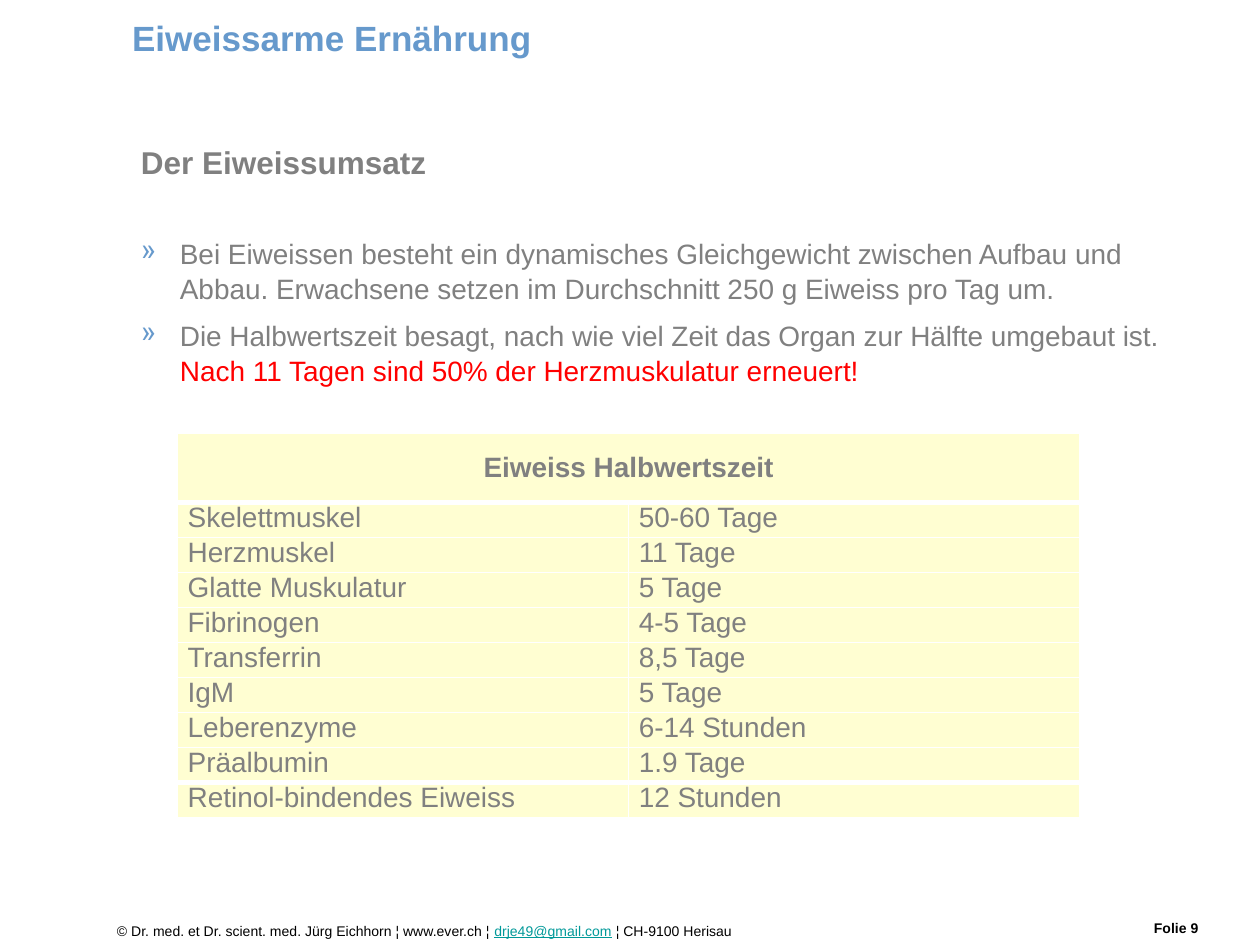
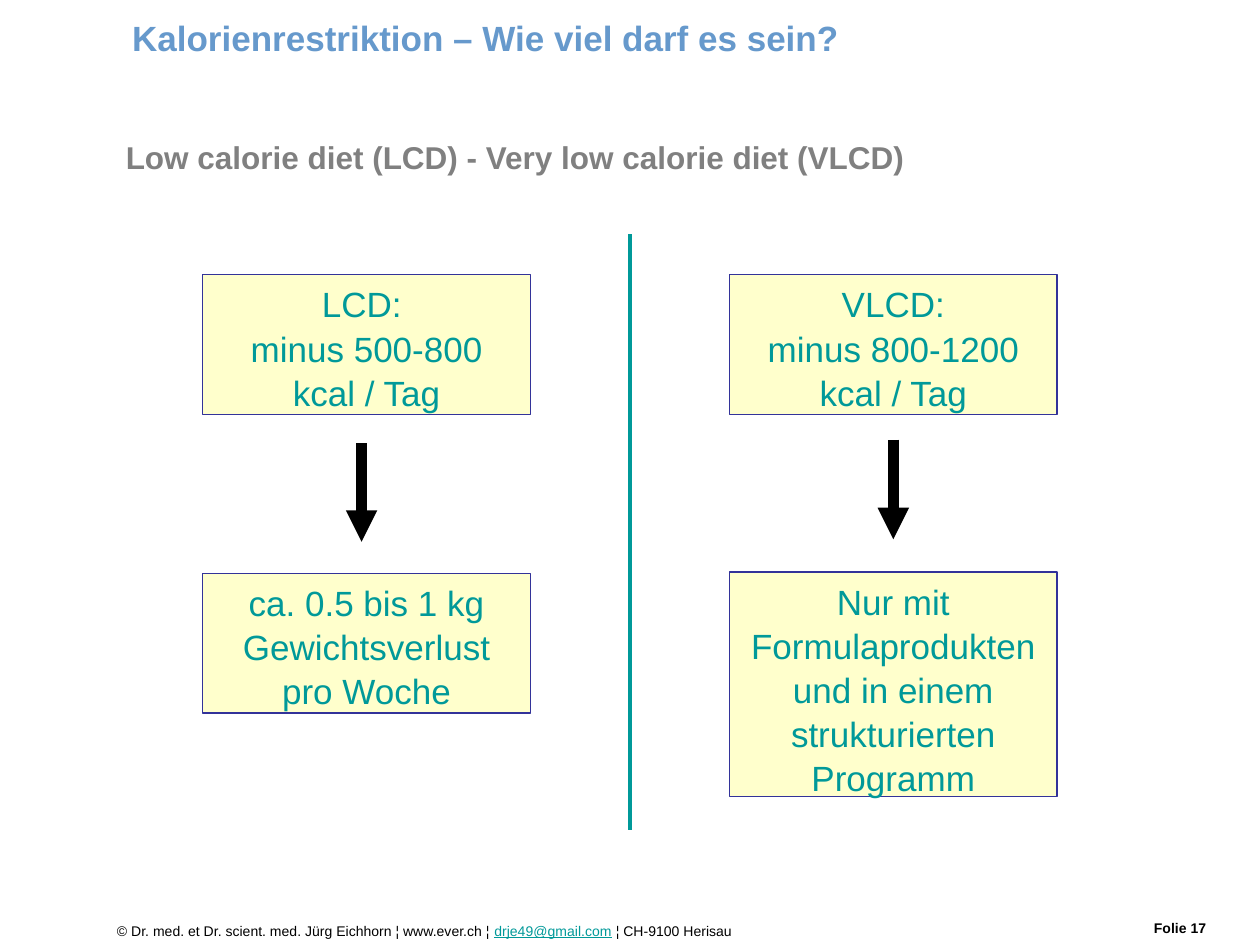
"""Builds two slides on protein turnover and calorie restriction."""
from dataclasses import dataclass, field
from typing import Any

from lxml import etree
from pptx import Presentation
from pptx.dml.color import RGBColor
from pptx.enum.shapes import MSO_CONNECTOR, MSO_SHAPE
from pptx.enum.text import MSO_ANCHOR, PP_ALIGN
from pptx.oxml.ns import qn
from pptx.util import Inches, Pt

STRAIGHT = MSO_CONNECTOR.STRAIGHT
RECTANGLE = MSO_SHAPE.RECTANGLE
TOP, MIDDLE = MSO_ANCHOR.TOP, MSO_ANCHOR.MIDDLE
LEFT, CENTER = PP_ALIGN.LEFT, PP_ALIGN.CENTER

FONT = "Arial"
BLUE, GREY, TEAL, RED = "6699CC", "808080", "009999", "FF0000"
BLACK, WHITE, NAVY = "000000", "FFFFFF", "333399"
CREAM, PALE_YELLOW = "FFFFCC", "FFFED2"
LINE_SPACING = 1.05
BULLET_INDENT = Inches(0.31)

TITLE = {"size": Pt(20), "bold": True}
HEADING = {"size": Pt(18), "bold": True}
BODY = {"size": Pt(16), "bold": False}
BOX = {"size": Pt(20), "bold": False}
FOOTER = {"size": Pt(8), "bold": False}
LINK = FOOTER | {"underline": True}
PAGE_NUMBER = FOOTER | {"bold": True}


@dataclass(frozen=True)
class Span:
    """A stretch of text in one format; a newline is a line break."""
    text: str
    style: dict[str, Any]
    color: str


@dataclass(frozen=True)
class Para:
    """A paragraph made of spans."""
    spans: list[Span]
    layout: dict[str, Any] = field(default_factory=dict)
    bullet: str = ""


@dataclass(frozen=True)
class Area:
    """A position and size in inches."""
    left: float
    top: float
    width: float
    height: float

    def lengths(self) -> list[int]:
        """Return the four measures as lengths."""
        return [Inches(n) for n in (self.left, self.top, self.width, self.height)]


@dataclass(frozen=True)
class Card:
    """A framed box with one or more paragraphs."""
    area: Area
    texts: list[str]


@dataclass(frozen=True)
class Stroke:
    """A vertical line, with or without an arrowhead."""
    x: float
    top: float
    bottom: float
    color: str
    width: float
    arrow: bool = False


FOOTER_SPANS = [
    Span("© Dr. med. et Dr. scient. med. Jürg Eichhorn ¦ www.ever.ch ¦ ", FOOTER, BLACK),
    Span("drje49@gmail.com", LINK, TEAL),
    Span(" ¦ CH-9100 Herisau", FOOTER, BLACK),
]

TURNOVER_PARAS = [
    Para([Span("Der Eiweissumsatz", HEADING, GREY)],
         {"line_spacing": LINE_SPACING, "space_after": Pt(31)}),
    Para([Span("Bei Eiweissen besteht ein dynamisches Gleichgewicht zwischen Aufbau und\n"
               "Abbau. Erwachsene setzen im Durchschnitt 250 g Eiweiss pro Tag um.", BODY, GREY)],
         {"line_spacing": LINE_SPACING, "space_after": Pt(6.4)}, "»"),
    Para([Span("Die Halbwertszeit besagt, nach wie viel Zeit das Organ zur Hälfte umgebaut ist.\n",
               BODY, GREY),
          Span("Nach 11 Tagen sind 50% der Herzmuskulatur erneuert!", BODY, RED)],
         {"line_spacing": LINE_SPACING}, "»"),
]

HALF_LIVES = [
    ("Skelettmuskel", "50-60 Tage"),
    ("Herzmuskel", "11 Tage"),
    ("Glatte Muskulatur", "5 Tage"),
    ("Fibrinogen", "4-5 Tage"),
    ("Transferrin", "8,5 Tage"),
    ("IgM", "5 Tage"),
    ("Leberenzyme", "6-14 Stunden"),
    ("Präalbumin", "1.9 Tage"),
    ("Retinol-bindendes Eiweiss", "12 Stunden"),
]
TABLE_AREA = Area(1.41, 3.44, 7.16, 3.05)
HEADER_HEIGHT = 0.55

LCD_LEFT, VLCD_LEFT, CARD_WIDTH = 1.61, 5.79, 2.6
CARDS = [
    Card(Area(LCD_LEFT, 2.18, CARD_WIDTH, 1.11), ["LCD: \nminus 500-800 kcal / Tag"]),
    Card(Area(VLCD_LEFT, 2.18, CARD_WIDTH, 1.11), ["VLCD:\nminus 800-1200 kcal / Tag"]),
    Card(Area(LCD_LEFT, 4.55, CARD_WIDTH, 1.11), ["ca. 0.5 bis 1 kg Gewichtsverlust pro Woche"]),
    Card(Area(VLCD_LEFT, 4.54, CARD_WIDTH, 1.78),
         ["Nur mit Formulaprodukten", "und in einem strukturierten Programm"]),
]
STROKES = [
    Stroke(5, 1.86, 6.59, TEAL, 2.25),
    Stroke(2.87, 3.52, 4.3, BLACK, 6, arrow=True),
    Stroke(7.09, 3.49, 4.28, BLACK, 6, arrow=True),
]


def rgb(color: str) -> RGBColor:
    """Turn a hex string into a colour."""
    return RGBColor.from_string(color)


def set_all(target: Any, values: dict[str, Any]) -> None:
    """Set each named attribute on the target."""
    for name, value in values.items():
        setattr(target, name, value)


def add_bullet(paragraph: Any, mark: str) -> None:
    """Give a paragraph a coloured hanging bullet."""
    properties = paragraph._p.get_or_add_pPr()
    properties.set("marL", str(BULLET_INDENT))
    properties.set("indent", str(-BULLET_INDENT))
    color = etree.SubElement(properties, qn("a:buClr"))
    etree.SubElement(color, qn("a:srgbClr"), val=BLUE)
    etree.SubElement(properties, qn("a:buChar"), char=mark)


def write(frame: Any, paras: list[Para]) -> None:
    """Fill a text frame with paragraphs."""
    frame.word_wrap = True
    for index, para in enumerate(paras):
        paragraph = frame.add_paragraph() if index else frame.paragraphs[0]
        if para.bullet:
            add_bullet(paragraph, para.bullet)
        set_all(paragraph, para.layout)
        for span in para.spans:
            for number, piece in enumerate(span.text.split("\n")):
                if number:
                    paragraph.add_line_break()
                if piece:
                    run = paragraph.add_run()
                    run.text = piece
                    set_all(run.font, {"name": FONT} | span.style)
                    run.font.color.rgb = rgb(span.color)


def add_text(page: Any, area: Area, paras: list[Para], anchor: MSO_ANCHOR = TOP) -> None:
    """Add a text box."""
    frame = page.shapes.add_textbox(*area.lengths()).text_frame
    frame.vertical_anchor = anchor
    write(frame, paras)


def add_page(deck: Any, title: str, number: int) -> Any:
    """Add a page with its title and footer."""
    page = deck.slides.add_slide(deck.slide_layouts[6])
    add_text(page, Area(9.06, 7.25, 0.94, 0.23), [Para([Span(f"Folie {number}", PAGE_NUMBER, BLACK)])])
    add_text(page, Area(0.83, 7.27, 8.11, 0.23), [Para(FOOTER_SPANS)])
    add_text(page, Area(0.95, 0.05, 6.42, 0.5), [Para([Span(title, TITLE, BLUE)])], MIDDLE)
    return page


def set_borders(cell: Any, top: float, bottom: float) -> None:
    """Draw white borders with the given top and bottom widths."""
    properties = cell._tc.get_or_add_tcPr()
    for side, width in {"L": 1, "R": 1, "T": top, "B": bottom}.items():
        line = etree.SubElement(properties, qn(f"a:ln{side}"), w=str(Pt(width)))
        fill = etree.SubElement(line, qn("a:solidFill"))
        etree.SubElement(fill, qn("a:srgbClr"), val=WHITE)


def add_half_life_table(page: Any) -> None:
    """Add the table of protein half-lives."""
    rows = [("Eiweiss Halbwertszeit", ""), *HALF_LIVES]
    last = len(rows) - 1
    table = page.shapes.add_table(len(rows), 2, *TABLE_AREA.lengths()).table
    set_all(table, {"first_row": False, "horz_banding": False})
    row_height = (TABLE_AREA.height - HEADER_HEIGHT) / last
    for index, texts in enumerate(rows):
        header = index == 0
        table.rows[index].height = Inches(HEADER_HEIGHT if header else row_height)
        for column, text in enumerate(texts):
            cell = table.cell(index, column)
            set_all(cell, {"margin_left": Inches(0.08), "margin_right": Inches(0.08),
                           "margin_top": 0, "margin_bottom": 0,
                           "vertical_anchor": MIDDLE if header else TOP})
            set_borders(cell, top=3 if index in (1, last) else 1,
                        bottom=3 if index in (0, last - 1) else 1)
            cell.fill.solid()
            cell.fill.fore_color.rgb = rgb(PALE_YELLOW)
            write(cell.text_frame, [Para([Span(text, BODY | {"bold": header}, GREY)],
                                         {"alignment": CENTER if header else LEFT})])
    table.cell(0, 0).merge(table.cell(0, 1))


def add_card(page: Any, card: Card) -> None:
    """Add a framed box with centred text."""
    box = page.shapes.add_shape(RECTANGLE, *card.area.lengths())
    box.shadow.inherit = False
    box.fill.solid()
    box.fill.fore_color.rgb = rgb(CREAM)
    box.line.color.rgb = rgb(NAVY)
    box.line.width = Pt(0.75)
    box.text_frame.vertical_anchor = TOP
    layout = {"alignment": CENTER, "line_spacing": LINE_SPACING}
    write(box.text_frame, [Para([Span(text, BOX, TEAL)], layout) for text in card.texts])


def add_stroke(page: Any, stroke: Stroke) -> None:
    """Add a vertical line or arrow."""
    x = Inches(stroke.x)
    connector = page.shapes.add_connector(STRAIGHT, x, Inches(stroke.top), x, Inches(stroke.bottom))
    connector.line.color.rgb = rgb(stroke.color)
    connector.line.width = Pt(stroke.width)
    properties = connector._element.spPr
    if stroke.arrow:
        etree.SubElement(properties.find(qn("a:ln")), qn("a:tailEnd"), type="triangle")
    etree.SubElement(properties, qn("a:effectLst"))


def main() -> None:
    """Build and save the deck."""
    deck = Presentation()
    deck.slide_width, deck.slide_height = Inches(10), Inches(7.5)

    turnover = add_page(deck, "Eiweissarme Ernährung", 9)
    add_text(turnover, Area(1.02, 1.07, 8.6, 5.73), TURNOVER_PARAS)
    add_half_life_table(turnover)

    restriction = add_page(deck, "Kalorienrestriktion – Wie viel darf es sein?", 17)
    heading = Span("Low calorie diet (LCD) - Very low calorie diet (VLCD)", HEADING, GREY)
    add_text(restriction, Area(0.9, 1.03, 8.6, 5.75), [Para([heading], {"line_spacing": LINE_SPACING})])
    for card in CARDS:
        add_card(restriction, card)
    for stroke in STROKES:
        add_stroke(restriction, stroke)

    deck.save("out.pptx")


if __name__ == "__main__":
    main()
